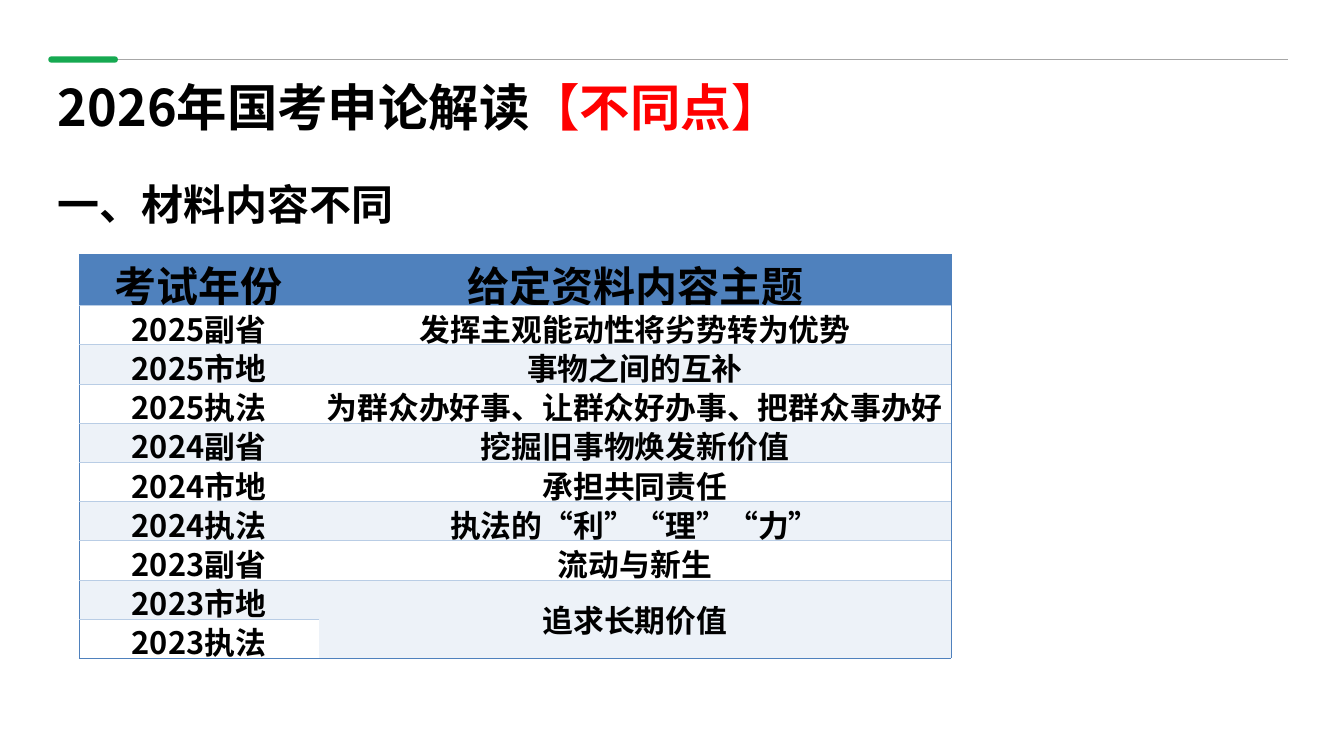
from pptx import Presentation
from pptx.dml.color import RGBColor as RGB
from pptx.enum.shapes import MSO_CONNECTOR as CON, MSO_SHAPE as SHP
from pptx.enum.text import MSO_ANCHOR as ANC, MSO_AUTO_SIZE as AUTO, PP_ALIGN as AL
from pptx.oxml.ns import qn
from pptx.util import Pt
from lxml.etree import SubElement as Sub

HUES = {"ink": "000000", "red": "FF0000", "green": "16A951", "gray": "A7A7A7",
        "blue": "4F81BD", "pale": "B9CDE5", "band": "EDF2F8", "white": "FFFFFF"}
PLAIN = "{2D5ABB26-0587-4C30-8999-92F81FD0307C}"

ROWS = [
    ("考试年份", "给定资料内容主题"),
    ("2025副省", "发挥主观能动性将劣势转为优势"),
    ("2025市地", "事物之间的互补"),
    ("2025执法", "为群众办好事、让群众好办事、把群众事办好"),
    ("2024副省", "挖掘旧事物焕发新价值"),
    ("2024市地", "承担共同责任"),
    ("2024执法", "执法的“利”“理”“力”"),
    ("2023副省", "流动与新生"),
    ("2023市地", "追求长期价值"),
    ("2023执法", ""),
]


class Deck:
    """Holds the font and the slide being drawn."""

    def __init__(self, slide, font="Noto Sans CJK SC"):
        self.slide, self.font = slide, font

    def hue(self, name):
        return RGB.from_string(HUES[name])

    def run(self, para, text, size, hue="ink"):
        run = para.add_run()
        run.text = text
        font = run.font
        font.size, font.bold, font.name = Pt(size), True, self.font
        font.color.rgb = self.hue(hue)
        Sub(run._r.get_or_add_rPr(), qn("a:ea"), typeface=self.font)

    def rule(self, left, right, y, hue, wide):
        line = self.slide.shapes.add_connector(CON.STRAIGHT, Pt(left), Pt(y), Pt(right), Pt(y))
        line.line.color.rgb = self.hue(hue)
        line.line.width = Pt(wide)
        Sub(line._element.spPr, qn("a:effectLst"))

    def pill(self, box, hue):
        bar = self.slide.shapes.add_shape(SHP.ROUNDED_RECTANGLE, *map(Pt, box))
        bar.adjustments[0] = 0.5
        bar.shadow.inherit = False
        bar.fill.solid()
        bar.fill.fore_color.rgb = self.hue(hue)
        bar.line.fill.background()

    def text(self, box, runs, size, align=AL.LEFT, space=1.0):
        frame = self.slide.shapes.add_textbox(*map(Pt, box)).text_frame
        frame.word_wrap = True
        frame.auto_size = AUTO.SHAPE_TO_FIT_TEXT
        para = frame.paragraphs[0]
        para.alignment, para.line_spacing = align, space
        for words, hue in runs:
            self.run(para, words, size, hue)

    def edge(self, cell, **hues):
        """Draw the named cell sides; a side with no hue is left clear."""
        props = cell._tc.get_or_add_tcPr()
        for spot, side in enumerate("LRTB"):
            line = props.makeelement(qn(f"a:ln{side}"), {"w": str(Pt(0.75))})
            props.insert(spot, line)
            if hues.get(side):
                fill = Sub(line, qn("a:solidFill"))
                Sub(fill, qn("a:srgbClr"), val=HUES[hues[side]])
            else:
                Sub(line, qn("a:noFill"))

    def cell(self, cell, text, size, fill):
        cell.margin_left = cell.margin_right = Pt(5)
        cell.margin_top = cell.margin_bottom = 0
        cell.vertical_anchor = ANC.MIDDLE
        cell.fill.solid()
        cell.fill.fore_color.rgb = self.hue(fill)
        para = cell.text_frame.paragraphs[0]
        para.alignment = AL.CENTER
        if text:
            self.run(para, text, size)

    def table(self, left, top, cols, head, high, rows):
        last = len(rows) - 1
        tall = head + high * last
        frame = self.slide.shapes.add_table(len(rows), len(cols), Pt(left), Pt(top),
                                            Pt(sum(cols)), Pt(tall))
        grid = frame.table
        grid._tbl.tblPr.find(qn("a:tableStyleId")).text = PLAIN
        for col, wide in zip(grid.columns, cols):
            col.width = Pt(wide)
        for r, row in enumerate(rows):
            grid.rows[r].height = Pt(high if r else head)
            fill = ("white" if r % 2 else "band") if r else "blue"
            for c, text in enumerate(row):
                cell = grid.cell(r, c)
                self.cell(cell, text, 44 if r else 60, fill)
                final = r == last or (c == 1 and r == last - 1)
                self.edge(cell, L=None if c else "blue", R="blue" if c else None,
                          T="pale" if r else "blue",
                          B="blue" if final or r == 0 else "pale")
        grid.cell(last - 1, 1).merge(grid.cell(last, 1))


def main():
    show = Presentation()
    show.slide_width, show.slide_height = Pt(1920), Pt(1080)
    deck = Deck(show.slides.add_slide(show.slide_layouts[6]))
    deck.rule(132, 1840, 85, "gray", 2.25)
    deck.pill((69, 80.5, 99.5, 9), "green")
    deck.text((75.5, 104.5, 1247, 94.5),
              [("2026年国考申论解读", "ink"), ("【不同点】", "red")], 72)
    deck.text((75.5, 216, 1819.5, 214.5), [("一、材料内容不同", "ink")], 60, AL.JUSTIFY, 1.5)
    deck.table(113, 363, (342.5, 903.5), 73.5, 56, ROWS)
    show.save("out.pptx")


if __name__ == "__main__":
    main()
